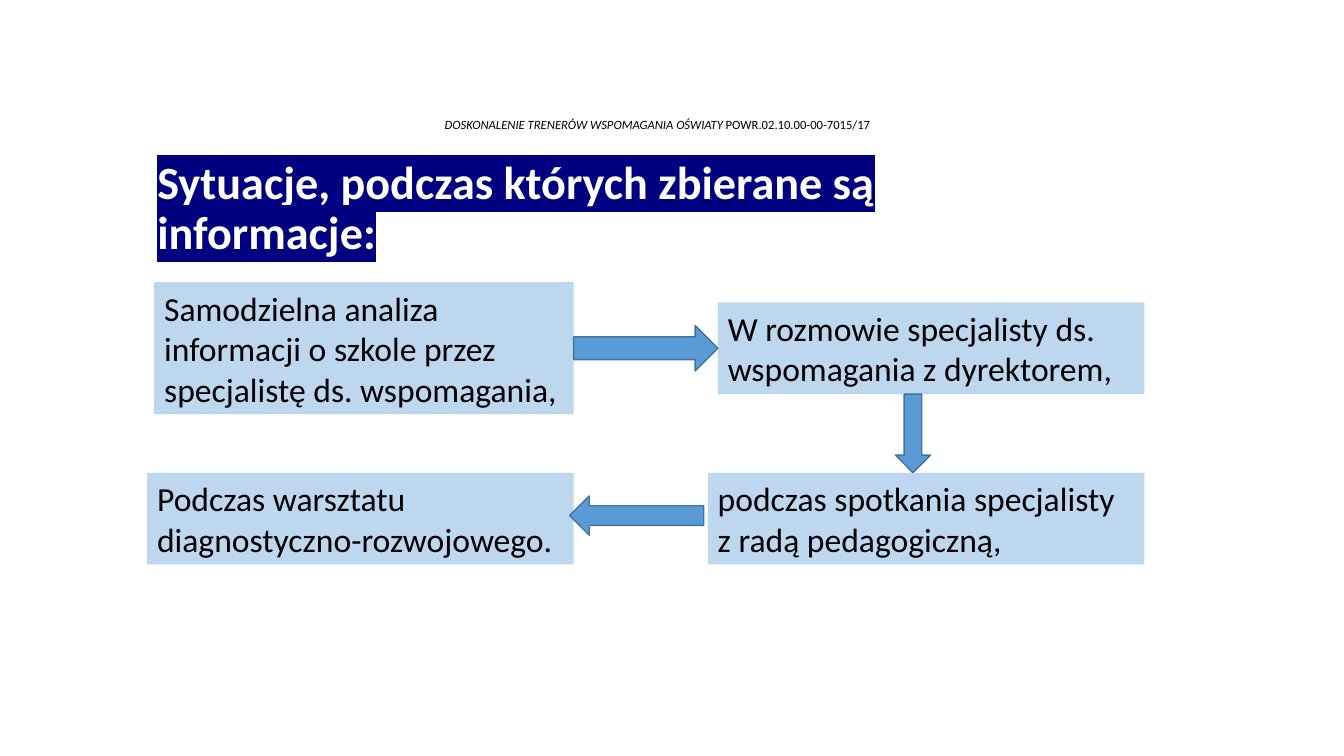
"""Build a slide showing the four situations in which information is gathered."""
from lxml.etree import SubElement
from pptx import Presentation
from pptx.dml.color import RGBColor
from pptx.enum.shapes import MSO_SHAPE
from pptx.enum.text import MSO_ANCHOR, MSO_AUTO_SIZE, PP_ALIGN
from pptx.oxml.ns import qn
from pptx.util import Inches, Pt

HEADER = [
    ("DOSKONALENIE TRENERÓW WSPOMAGANIA OŚWIATY ", {"italic": True}),
    ("POWR.02.10.00-00-7015/17", {"italic": False}),
]
TITLE = "Sytuacje, podczas których zbierane są informacje:"
STEPS = [
    ("Samodzielna analiza informacji o szkole przez specjalistę ds. wspomagania,",
     (1.53, 2.8, 4.16, 1.31)),
    ("W rozmowie specjalisty ds. wspomagania z dyrektorem,", (7.12, 3, 4.23, 0.91)),
    ("podczas spotkania specjalisty z radą pedagogiczną,", (7.02, 4.69, 4.33, 0.91)),
    ("Podczas warsztatu diagnostyczno-rozwojowego.", (1.46, 4.69, 4.23, 0.91)),
]
ARROWS = [
    (MSO_SHAPE.RIGHT_ARROW, (5.69, 3.23, 1.43, 0.45)),
    (MSO_SHAPE.DOWN_ARROW, (8.88, 3.91, 0.35, 0.78)),
    (MSO_SHAPE.LEFT_ARROW, (5.65, 4.92, 1.33, 0.39)),
]
HEADER_AREA = (0.79, 1.1, 11.46, 0.28)
TITLE_AREA = (1.46, 1.57, 9.27, 1.01)


def color(value):
    return RGBColor.from_string(value)


def place(shape, area):
    for name, length in zip(("left", "top", "width", "height"), area):
        setattr(shape, name, Inches(length))


def add_span(para, text, size, ink="000000", **formats):
    span = para.add_run()
    span.text = text
    span.font.color.rgb = color(ink)
    for name, value in {"name": "Calibri", "size": Pt(size), **formats}.items():
        setattr(span.font, name, value)
    return span


def prepare_text(shape, align=PP_ALIGN.LEFT, spacing=1.0):
    frame = shape.text_frame
    formats = {"word_wrap": True, "auto_size": MSO_AUTO_SIZE.NONE,
               "vertical_anchor": MSO_ANCHOR.MIDDLE}
    for name, value in formats.items():
        setattr(frame, name, value)
    para = frame.paragraphs[0]
    para.alignment = align
    para.line_spacing = spacing
    return para


def add_filled(slide, kind, area, fill):
    shape = slide.shapes.add_shape(kind, *map(Inches, area))
    shape.shadow.inherit = False
    shape.fill.solid()
    shape.fill.fore_color.rgb = color(fill)
    return shape


def add_title(slide):
    title = slide.shapes.title
    place(title, TITLE_AREA)
    para = prepare_text(title, spacing=0.9)
    span = add_span(para, TITLE, 33, "FFFFFF", bold=True)
    properties = span.font._element if hasattr(span.font, "_element") else span._r.rPr
    highlight = SubElement(properties, qn("a:highlight"))
    SubElement(highlight, qn("a:srgbClr"), val="000080")
    properties.find(qn("a:solidFill")).addnext(highlight)


def main():
    deck = Presentation()
    deck.slide_width, deck.slide_height = Inches(13.33), Inches(7.5)
    slide = deck.slides.add_slide(deck.slide_layouts[5])

    header = slide.shapes.add_textbox(*map(Inches, HEADER_AREA))
    para = prepare_text(header, PP_ALIGN.CENTER, 0.9)
    for text, formats in HEADER:
        add_span(para, text, 9, **formats)

    add_title(slide)

    for text, area in STEPS:
        box = add_filled(slide, MSO_SHAPE.RECTANGLE, area, "BDD7EE")
        box.line.fill.background()
        add_span(prepare_text(box), text, 24)

    for kind, area in ARROWS:
        arrow = add_filled(slide, kind, area, "5B9BD5")
        arrow.line.color.rgb = color("43739E")
        arrow.line.width = Pt(1)

    deck.save("out.pptx")


if __name__ == "__main__":
    main()
